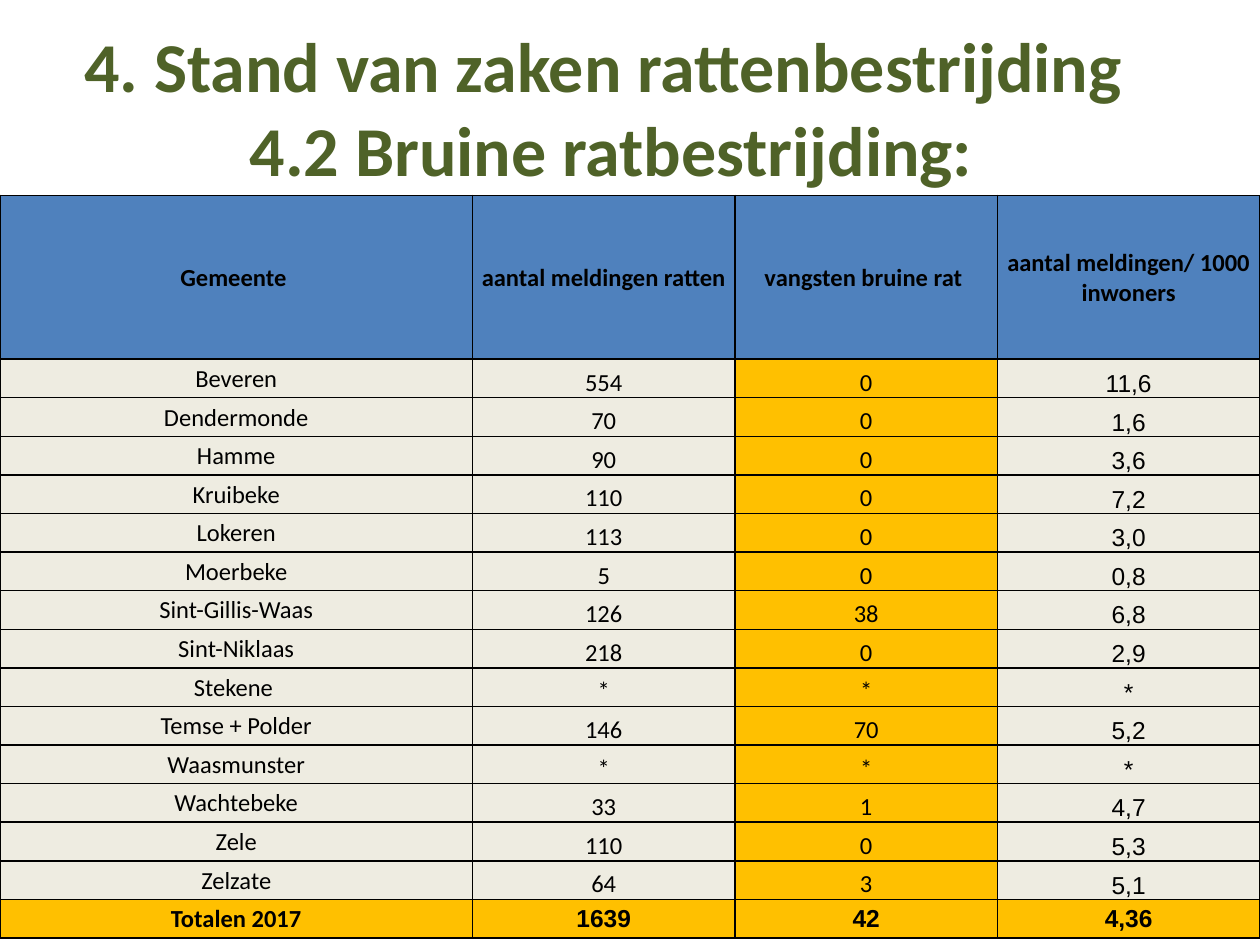
from lxml import etree
from pptx import Presentation
from pptx.dml.color import RGBColor
from pptx.enum import text
from pptx.oxml.ns import qn
from pptx.util import Inches, Pt

GREEN = RGBColor(0x4F, 0x62, 0x28)
BLUE = RGBColor(0x4F, 0x81, 0xBD)
CREAM = RGBColor(0xEE, 0xEC, 0xE1)
GOLD = RGBColor(0xFF, 0xC0, 0x00)
BLACK = RGBColor(0, 0, 0)

TITLE = ["4. Stand van zaken rattenbestrijding ", "4.2 Bruine ratbestrijding:"]
HEAD = ["Gemeente ", "aantal meldingen ratten", "vangsten bruine rat ",
        "aantal meldingen/ 1000 inwoners"]
BODY = [
    ["Beveren", "554", "0", "11,6"],
    ["Dendermonde", "70", "0", "1,6"],
    ["Hamme", "90", "0", "3,6"],
    ["Kruibeke", "110", "0", "7,2"],
    ["Lokeren", "113", "0", "3,0"],
    ["Moerbeke", "5", "0", "0,8"],
    ["Sint-Gillis-Waas", "126", "38", "6,8"],
    ["Sint-Niklaas", "218", "0", "2,9"],
    ["Stekene ", "*", "*", "*"],
    ["Temse + Polder", "146", "70", "5,2"],
    ["Waasmunster", "*", "*", "*"],
    ["Wachtebeke", "33", "1", "4,7"],
    ["Zele", "110", "0", "5,3"],
    ["Zelzate", "64", "3", "5,1"],
]
TOTAL = ["Totalen 2017", "1639", "42", "4,36"]


def write(para, words, size, face, color, bold):
    """Add one centred run to a paragraph."""
    para.alignment = text.PP_ALIGN.CENTER
    run = para.add_run()
    run.text = words
    font = run.font
    font.size, font.name, font.bold = Pt(size), face, bold
    font.color.rgb = color


def add_title(slide, left, top, width, height):
    """Place the two-line title in its placeholder."""
    title = slide.shapes.title
    title.left, title.top, title.width, title.height = left, top, width, height
    frame = title.text_frame
    frame.word_wrap = True
    frame.auto_size = text.MSO_AUTO_SIZE.NONE
    frame.vertical_anchor = text.MSO_ANCHOR.TOP
    for i, line in enumerate(TITLE):
        para = frame.add_paragraph() if i else frame.paragraphs[0]
        write(para, line, 40, "Calibri", GREEN, True)


def add_edges(cell):
    """Draw a thin black line on each side of a cell."""
    props = cell._tc.get_or_add_tcPr()
    for i, side in enumerate(("lnL", "lnR", "lnT", "lnB")):
        line = etree.Element(qn("a:" + side), w=str(Pt(1)))
        fill = etree.SubElement(line, qn("a:solidFill"))
        etree.SubElement(fill, qn("a:srgbClr"), val=str(BLACK))
        props.insert(i, line)


def fill_cell(cell, words, color, face, bold, anchor):
    """Set the text, fill and edges of a cell."""
    cell.margin_left = cell.margin_right = cell.margin_top = Inches(0.01)
    cell.margin_bottom = 0
    cell.vertical_anchor = anchor
    cell.fill.solid()
    cell.fill.fore_color.rgb = color
    add_edges(cell)
    write(cell.text_frame.paragraphs[0], words, 14, face, BLACK, bold)


def add_counts(slide, left, top, width, height):
    """Place the table of reports and catches per town."""
    rows = [HEAD, *BODY, TOTAL]
    last = len(rows) - 1
    table = slide.shapes.add_table(len(rows), len(HEAD), left, top, width, height).table
    first, tall = Inches(3.75), Inches(1.3)
    for c, col in enumerate(table.columns):
        col.width = int((width - first) / 3) if c else first
    for r, row in enumerate(table.rows):
        row.height = int((height - tall) / last) if r else tall
        for c, words in enumerate(rows[r]):
            edge = r in (0, last)
            if r == 0:
                color = BLUE
            else:
                color = GOLD if r == last or c == 2 else CREAM
            arial = c == 3 and r > 0 or c > 0 and r == last
            middle = edge or c == 0
            anchor = text.MSO_ANCHOR.MIDDLE if middle else text.MSO_ANCHOR.BOTTOM
            fill_cell(table.cell(r, c), words, color,
                      "Arial" if arial else "Calibri", edge, anchor)


def main():
    """Build and save the slide."""
    deck = Presentation()
    deck.slide_width, deck.slide_height = Inches(10), Inches(7.5)
    slide = deck.slides.add_slide(deck.slide_layouts[5])
    add_title(slide, Inches(0.35), Inches(0.13), Inches(9), Inches(5.42))
    add_counts(slide, 0, Inches(1.55), Inches(10), Inches(5.9))
    deck.save("out.pptx")


if __name__ == "__main__":
    main()
